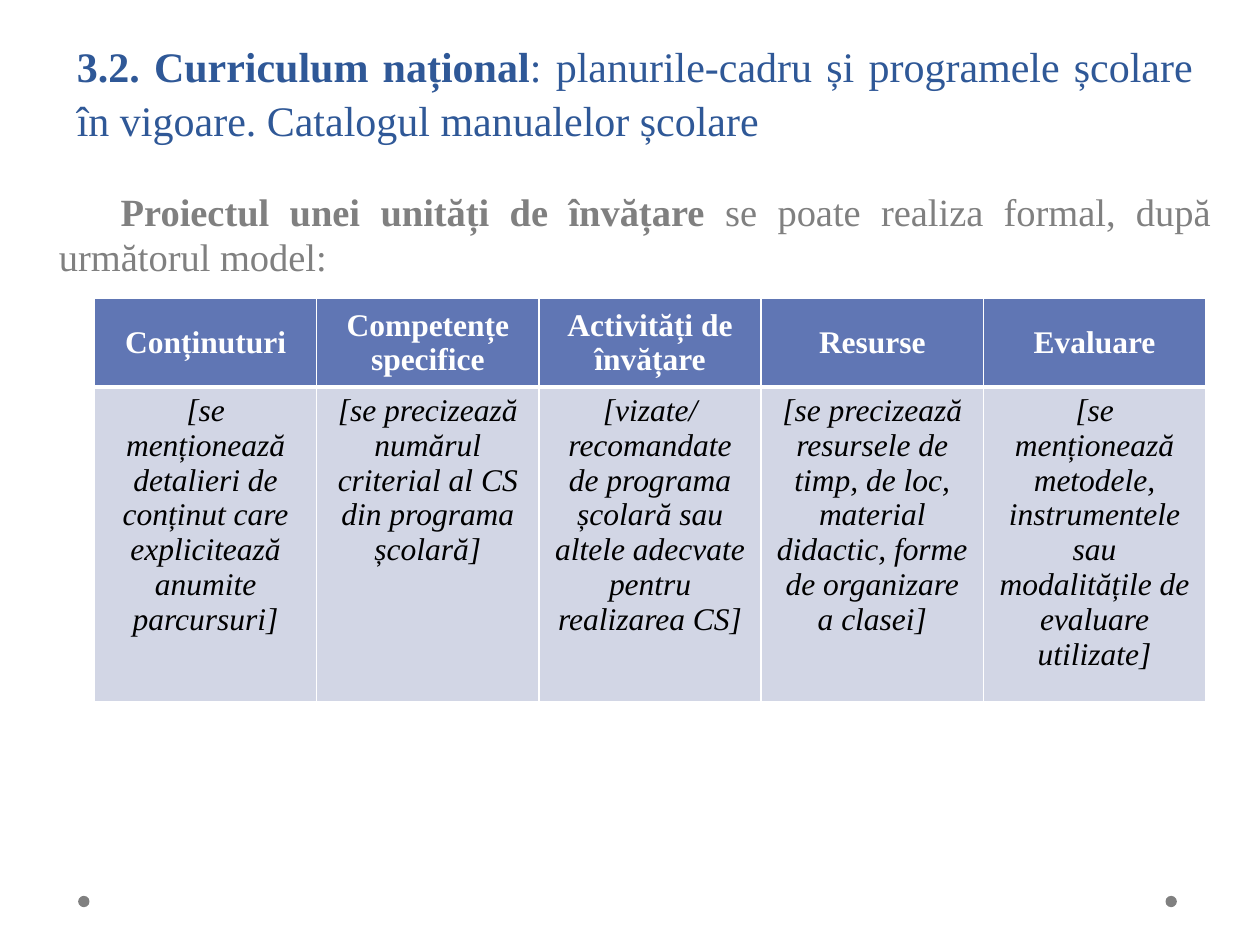
import pptx
import pptx.util
import pptx.dml.color
import pptx.enum.shapes
import pptx.enum.text
import pptx.oxml
import pptx.oxml.ns
from pptx.util import Inches

FONT = "Times New Roman"
ALIGN = pptx.enum.text.PP_ALIGN
ANCHOR = pptx.enum.text.MSO_ANCHOR

COLUMNS = [
    ("Conținuturi",
     "[se menționează detalieri de conținut care explicitează anumite parcursuri]"),
    ("Competențe specifice",
     "[se precizează numărul criterial al CS din programa școlară]"),
    ("Activități de învățare",
     "[vizate/ recomandate de programa școlară sau altele adecvate pentru realizarea CS]"),
    ("Resurse",
     "[se precizează resursele de timp, de loc, material didactic, forme de organizare a clasei]"),
    ("Evaluare",
     "[se menționează metodele, instrumentele sau modalitățile de evaluare utilizate]"),
]


def color(value):
    return pptx.dml.color.RGBColor.from_string(value)


def add_span(para, text, size, fill, bold=False, italic=False):
    span = para.add_run()
    span.text = text
    span.font.name = FONT
    span.font.size = pptx.util.Pt(size)
    span.font.color.rgb = color(fill)
    span.font.bold = bold
    span.font.italic = italic


def place(shape, left, top, width, height):
    shape.left, shape.top = Inches(left), Inches(top)
    shape.width, shape.height = Inches(width), Inches(height)


def add_title(page, left, top, width, height):
    title = page.shapes.title
    place(title, left, top, width, height)
    frame = title.text_frame
    frame.word_wrap = True
    frame.auto_size = pptx.enum.text.MSO_AUTO_SIZE.NONE
    frame.vertical_anchor = ANCHOR.BOTTOM
    para = frame.paragraphs[0]
    para.alignment = ALIGN.JUSTIFY
    para.line_spacing = 1.08
    add_span(para, "3.2. Curriculum național", 24, "2F5897", bold=True)
    add_span(para, ": planurile-cadru și programele școlare în vigoare. "
             "Catalogul manualelor școlare", 24, "2F5897")


def add_intro(page, left, top, width, height):
    box = page.shapes.add_textbox(*map(Inches, (left, top, width, height)))
    box.text_frame.word_wrap = True
    para = box.text_frame.paragraphs[0]
    para.alignment = ALIGN.JUSTIFY
    para.line_spacing = 0.96
    properties = para._p.get_or_add_pPr()
    properties.set("marL", "0")
    properties.set("indent", str(Inches(0.49)))
    add_span(para, "Proiectul unei unități de învățare", 22, "808080", bold=True)
    add_span(para, " se poate realiza formal, după următorul model:", 22, "808080")


def set_borders(cell, top, bottom):
    properties = cell._tc.get_or_add_tcPr()
    widths = {"lnL": 1, "lnR": 1, "lnT": top, "lnB": bottom}
    for index, (side, width) in enumerate(widths.items()):
        properties.insert(index, pptx.oxml.parse_xml(
            f'<a:{side} {pptx.oxml.ns.nsdecls("a")} w="{pptx.util.Pt(width)}">'
            f'<a:solidFill><a:srgbClr val="FFFFFF"/></a:solidFill></a:{side}>'))


def fill_cell(cell, text, fill, ink, header):
    cell.fill.solid()
    cell.fill.fore_color.rgb = color(fill)
    cell.vertical_anchor = ANCHOR.MIDDLE if header else ANCHOR.TOP
    para = cell.text_frame.paragraphs[0]
    para.alignment = ALIGN.CENTER
    add_span(para, text, 18, ink, bold=header, italic=not header)
    set_borders(cell, 1 if header else 3, 3 if header else 1)


def add_model_table(page, left, top, width, row_heights):
    box = page.shapes.add_table(
        2, len(COLUMNS), *map(Inches, (left, top, width, sum(row_heights))))
    table = box.table
    for row, height in zip(table.rows, row_heights):
        row.height = Inches(height)
    for index, (heading, content) in enumerate(COLUMNS):
        table.columns[index].width = Inches(width / len(COLUMNS))
        fill_cell(table.cell(0, index), heading, "6076B4", "FFFFFF", True)
        fill_cell(table.cell(1, index), content, "D2D6E5", "000000", False)


def add_footer_dots(page, lefts, top, size):
    for left in lefts:
        dot = page.shapes.add_shape(
            pptx.enum.shapes.MSO_SHAPE.OVAL, *map(Inches, (left, top, size, size)))
        dot.shadow.inherit = False
        dot.fill.solid()
        dot.fill.fore_color.rgb = color("808080")
        dot.line.fill.background()


def main():
    deck = pptx.Presentation()
    deck.slide_width, deck.slide_height = Inches(10), Inches(7.5)
    page = deck.slides.add_slide(deck.slide_layouts[5])
    page.background.fill.solid()
    page.background.fill.fore_color.rgb = color("FFFFFF")
    add_footer_dots(page, (0.62, 9.25), 7.11, 0.09)
    add_title(page, 0.51, 0.36, 9.06, 0.84)
    add_intro(page, 0.37, 1.47, 9.34, 1.81)
    add_model_table(page, 0.75, 2.37, 8.82, (0.64, 2.3))
    deck.save("out.pptx")


if __name__ == "__main__":
    main()
